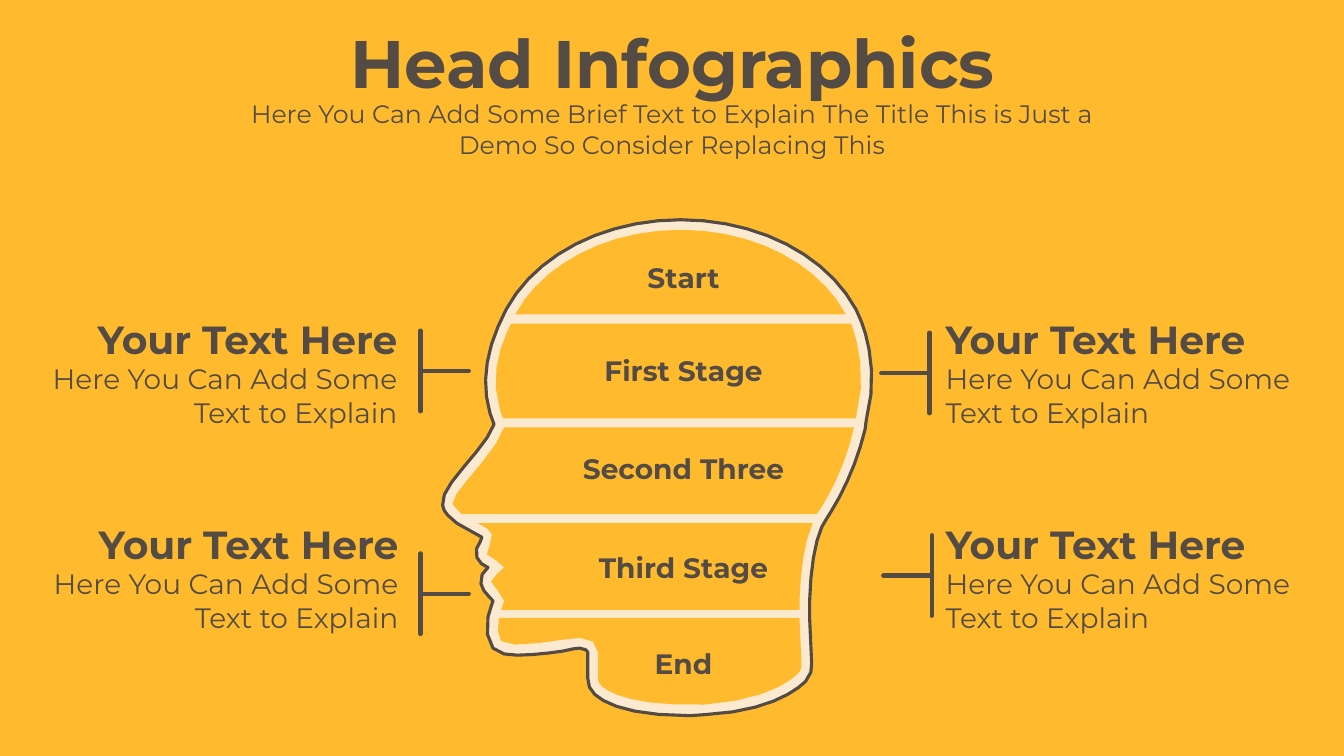
from math import ceil, dist

from lxml.etree import SubElement
from pptx import Presentation
from pptx.dml.color import RGBColor
from pptx.enum.shapes import MSO_CONNECTOR
from pptx.enum.text import MSO_AUTO_SIZE, PP_ALIGN
from pptx.oxml.ns import qn
from pptx.util import Inches, Pt

AMBER = RGBColor(0xFF, 0xBB, 0x2D)
CREAM = RGBColor(0xFC, 0xEA, 0xD0)
BROWN = RGBColor(0x54, 0x4C, 0x44)

# Outlines: a start point, then (x, y) for a line or six numbers for a curve
HEAD = [
    (6.84, 7.1),
    (6.27, 7.1, 6.01, 6.99, 5.9, 6.89), (5.85, 6.85, 5.83, 6.79, 5.83, 6.73),
    (5.83, 6.47),
    (5.83, 6.45, 5.8, 6.44, 5.75, 6.43), (5.73, 6.43, 5.65, 6.44, 5.58, 6.46),
    (5.44, 6.48, 5.27, 6.5, 5.13, 6.5), (5.05, 6.5, 4.94, 6.49, 4.89, 6.43),
    (4.83, 6.35, 4.82, 6.25, 4.84, 6.12),
    (4.87, 6.02), (4.89, 5.96), (4.85, 5.92),
    (4.81, 5.88, 4.78, 5.84, 4.77, 5.79), (4.75, 5.72, 4.8, 5.67, 4.84, 5.63),
    (4.79, 5.61, 4.75, 5.58, 4.73, 5.53), (4.7, 5.47, 4.74, 5.41, 4.76, 5.38),
    (4.78, 5.33), (4.69, 5.28), (4.53, 5.19), (4.44, 5.11),
    (4.41, 5.08, 4.39, 5.04, 4.39, 5.01),
    (4.38, 4.91, 4.45, 4.81, 4.61, 4.62), (4.72, 4.49, 4.86, 4.33, 4.9, 4.21),
    (4.86, 4.1),
    (4.78, 3.83, 4.81, 3.54, 4.94, 3.24),
    (5.02, 3.07),
    (5.31, 2.53, 5.99, 2.18, 6.75, 2.18), (7.52, 2.18, 8.2, 2.53, 8.49, 3.07),
    (8.53, 3.16),
    (8.54, 3.18, 8.74, 3.62, 8.59, 4.18),
    (8.58, 4.26),
    (8.51, 4.55, 8.39, 4.84, 8.24, 5.08),
    (8.19, 5.16), (8.15, 5.23),
    (8.08, 5.39, 8.04, 5.64, 8.03, 5.96),
    (8.03, 6.13), (8.05, 6.58),
    (8.06, 6.64, 8.04, 6.7, 7.99, 6.76),
    (7.88, 6.87, 7.59, 7.06, 6.99, 7.09),
    (6.84, 7.1),
]
END_BAND = [
    (4.95, 6.13), (7.93, 6.13), (7.95, 6.59),
    (7.95, 6.63, 7.94, 6.66, 7.92, 6.68),
    (7.83, 6.77, 7.57, 6.95, 6.99, 6.99), (6.3, 7.01, 6.05, 6.88, 5.97, 6.81),
    (5.95, 6.79, 5.93, 6.76, 5.93, 6.73),
    (5.93, 6.47),
    (5.93, 6.38, 5.86, 6.33, 5.76, 6.33), (5.65, 6.32, 5.05, 6.46, 4.97, 6.36),
    (4.93, 6.31, 4.93, 6.22, 4.95, 6.13),
]
THIRD_BAND = [
    (8.06, 5.19),
    (7.97, 5.39, 7.94, 5.68, 7.93, 5.96),
    (7.93, 6.05), (4.97, 6.05), (5, 5.96),
    (5, 5.9, 4.88, 5.82, 4.87, 5.77), (4.86, 5.72, 4.99, 5.67, 5, 5.63),
    (5.01, 5.58, 4.84, 5.54, 4.83, 5.5), (4.81, 5.45, 4.9, 5.39, 4.88, 5.3),
    (4.87, 5.26, 4.81, 5.23, 4.74, 5.19),
]
SECOND_BAND = [
    (8.47, 4.24),
    (8.41, 4.53, 8.28, 4.82, 8.15, 5.03),
    (8.1, 5.1), (4.58, 5.1), (4.52, 5.04),
    (4.5, 5.03, 4.5, 5.01, 4.49, 4.99), (4.48, 4.88, 4.91, 4.51, 5, 4.24),
]
FIRST_BAND = [
    (8.49, 4.15), (4.99, 4.15), (4.96, 4.07),
    (4.87, 3.78, 4.93, 3.51, 5.03, 3.29),
    (5.07, 3.21), (8.44, 3.21),
    (8.44, 3.21, 8.63, 3.63, 8.49, 4.15),
]
START_BAND = [
    (8.39, 3.12), (5.11, 3.12),
    (5.37, 2.63, 6.01, 2.28, 6.75, 2.28), (7.5, 2.28, 8.13, 2.63, 8.39, 3.12),
]
STAGES = [("Start", 2.54), ("First Stage", 3.46), ("Second Three", 4.43),
          ("Third Stage", 5.41), ("End", 6.36)]

# Callouts: text left, text top, alignment, bar x, bar middle, stem end
CALLOUTS = [
    (0.17, 3.08, PP_ALIGN.RIGHT, 4.17, 3.68, 4.65),
    (9.28, 3.08, PP_ALIGN.LEFT, 9.22, 3.7, 8.74),
    (0.18, 5.11, PP_ALIGN.RIGHT, 4.17, 5.89, 4.65),
    (9.28, 5.11, PP_ALIGN.LEFT, 9.24, 5.71, 8.76),
]


def trace(outline, spacing=0.2):
    """Turn an outline into points, with few on short curves."""
    points = [outline[0]]
    for segment in outline[1:]:
        if len(segment) == 2:
            points.append(segment)
            continue
        x0, y0 = points[-1]
        x1, y1, x2, y2, x3, y3 = segment
        steps = max(2, ceil(dist((x0, y0), (x3, y3)) / spacing))
        for step in range(1, steps + 1):
            t = step / steps
            a, b, c, d = (1 - t) ** 3, 3 * t * (1 - t) ** 2, 3 * t * t * (1 - t), t ** 3
            points.append((a * x0 + b * x1 + c * x2 + d * x3,
                           a * y0 + b * y1 + c * y2 + d * y3))
    return points


class SlideBuilder:
    def __init__(self, slide, font, color):
        self.slide, self.font, self.color = slide, font, color

    def text(self, text, left, top, width, height, size, align, bold=False):
        box = self.slide.shapes.add_textbox(
            Inches(left), Inches(top), Inches(width), Inches(height))
        text_frame = box.text_frame
        text_frame.word_wrap = True
        text_frame.auto_size = MSO_AUTO_SIZE.SHAPE_TO_FIT_TEXT
        text_frame.text = text
        paragraph = text_frame.paragraphs[0]
        paragraph.alignment = align
        font = paragraph.runs[0].font
        font.name, font.size, font.bold = self.font, Pt(size), bold
        font.color.rgb = self.color

    def freeform(self, outline, fill, line_width=None):
        start, *rest = [(Inches(x), Inches(y)) for x, y in trace(outline)]
        builder = self.slide.shapes.build_freeform(*start)
        builder.add_line_segments(rest, close=True)
        shape = builder.convert_to_shape()
        shape.shadow.inherit = False
        shape.fill.solid()
        shape.fill.fore_color.rgb = fill
        if line_width:
            shape.line.color.rgb = self.color
            shape.line.width = Pt(line_width)
        else:
            shape.line.fill.background()

    def line(self, x1, y1, x2, y2):
        connector = self.slide.shapes.add_connector(
            MSO_CONNECTOR.STRAIGHT, Inches(x1), Inches(y1), Inches(x2), Inches(y2))
        connector.line.color.rgb = self.color
        connector.line.width = Pt(3)
        properties = connector._element.spPr
        properties.find(qn("a:ln")).set("cap", "rnd")
        SubElement(properties, qn("a:effectLst"))


def main():
    presentation = Presentation()
    presentation.slide_width, presentation.slide_height = Inches(13.33), Inches(7.5)
    slide = presentation.slides.add_slide(presentation.slide_layouts[6])
    slide.background.fill.solid()
    slide.background.fill.fore_color.rgb = AMBER
    builder = SlideBuilder(slide, "Montserrat", BROWN)

    # Title and subtitle
    builder.text("Head Infographics", 2.78, 0.16, 7.78, 0.91, 48, PP_ALIGN.CENTER, True)
    builder.text("Here You Can Add Some Brief Text to Explain The Title This is Just a "
                 "Demo So Consider Replacing This", 2.3, 0.93, 8.73, 0.71, 18, PP_ALIGN.CENTER)

    # Head with its rim and bands
    builder.freeform(HEAD, CREAM, 2.25)
    for band in (END_BAND, THIRD_BAND, SECOND_BAND, FIRST_BAND, START_BAND):
        builder.freeform(band, AMBER)
    for stage, top in STAGES:
        builder.text(stage, 5.65, top, 2.26, 0.44, 20, PP_ALIGN.CENTER, True)

    # Callouts with brackets
    for left, top, align, bar, middle, stem_end in CALLOUTS:
        builder.text("Your Text Here", left, top, 3.87, 0.57, 28, align, True)
        builder.text("Here You Can Add Some Text to Explain",
                     left, top + 0.46, 3.87, 0.77, 20, align)
        builder.line(min(bar, stem_end), middle, max(bar, stem_end), middle)
        builder.line(bar, middle, bar, middle - 0.4)
        builder.line(bar, middle + 0.4, bar, middle)

    presentation.save("out.pptx")


if __name__ == "__main__":
    main()
